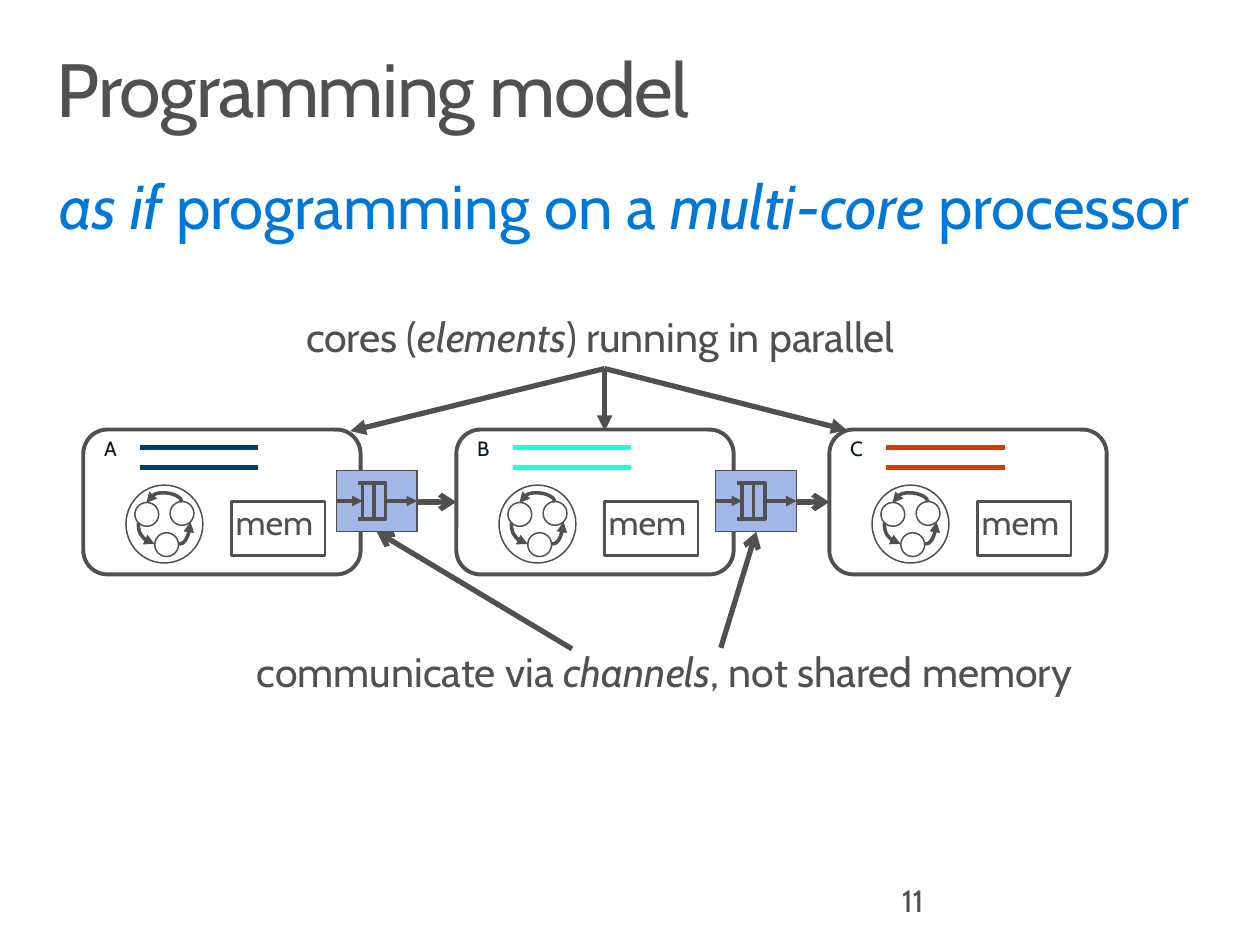
from lxml import etree
from pptx import Presentation
from pptx.dml.color import RGBColor
from pptx.enum.shapes import MSO_CONNECTOR as LINK, MSO_SHAPE as SHAPE
from pptx.oxml.ns import qn
from pptx.util import Cm, Pt

color = RGBColor.from_string
GRAY, BLUE, WHITE = "505050", "0078D7", "FFFFFF"


def add_box(shapes, kind, left, top, width, height, fill, weight):
    box = shapes.add_shape(kind, Cm(left), Cm(top), Cm(width), Cm(height))
    box.shadow.inherit = False
    if fill:
        box.fill.solid()
        box.fill.fore_color.rgb = color(fill)
    else:
        box.fill.background()
    box.line.color.rgb = color(GRAY)
    box.line.width = Pt(weight)
    return box


def add_line(shapes, start, end, weight, stroke=GRAY, head=None, tail=None, kind=LINK.STRAIGHT):
    line = shapes.add_connector(kind, *map(Cm, start + end))
    line.line.color.rgb = color(stroke)
    line.line.width = Pt(weight)
    outline = line.line._get_or_add_ln()
    for tag, arrow in (("a:headEnd", head), ("a:tailEnd", tail)):
        if arrow:
            etree.SubElement(outline, qn(tag)).set("type", arrow)
    etree.SubElement(line._element.spPr, qn("a:effectLst"))
    return line


prs = Presentation()
prs.slide_width, prs.slide_height = Cm(25.4), Cm(19.05)
slide = prs.slides.add_slide(prs.slide_layouts[6])
canvas = slide.shapes

texts = [
    (0.74, 0.81, 23.9, 2.49, 0.41, 0.25, 43.1, GRAY, 0.9, ["Programming model"]),
    (0.74, 3.3, 24.33, 1.88, 0.46, 0.25, 35.3, BLUE, 0.9,
     ["", "as if", " programming on a ", "multi-core", " processor"]),
    (5.66, 5.99, 14.12, 1.7, 0.51, 0.41, 23.5, GRAY, 0.9,
     ["cores (", "elements", ") running in parallel"]),
    (4.67, 12.73, 18.24, 1.7, 0.51, 0.41, 23.5, GRAY, 0.9,
     ["communicate via ", "channels", ", not shared memory"]),
    (17.93, 17.65, 5.72, 1.02, 0.25, 0.13, 17.6, GRAY, 1, ["11"]),
]

core_pitch = 7.52
cores = []
for index, (letter, thread_color) in enumerate([("A", "003C6C"), ("B", "1BFFE3"), ("C", "D83B01")]):
    x = 1.68 + index * core_pitch
    cores.append(add_box(canvas, SHAPE.ROUNDED_RECTANGLE, x, 8.66, 5.59, 2.92, WHITE, 2.25))
    texts.append((x + 0.17, 8.66, 4.04, 0.76, 0.25, 0.13, 11.8, "061922", 1, [letter]))

    machine = canvas.add_group_shape().shapes
    add_box(machine, SHAPE.OVAL, x + 0.86, 9.78, 1.55, 1.57, None, 0.85)
    for dx, top in [(1.44, 10.74), (1.04, 10.13), (1.75, 10.11)]:
        add_box(machine, SHAPE.OVAL, x + dx, top, 0.48, 0.48, WHITE, 0.85)
    to_right = add_line(machine, (x + 1.93, 10.97), (x + 2.16, 10.52), 2,
                        tail="triangle", kind=LINK.CURVE)
    to_bottom = add_line(machine, (x + 1.44, 10.97), (x + 1.11, 10.54), 2,
                         head="triangle", kind=LINK.CURVE)
    for quarter in (to_right, to_bottom):
        quarter._element.spPr.find(qn("a:prstGeom")).set("prst", "curvedConnector2")
    to_left = add_line(machine, (x + 1.64, 10.49), (x + 1.62, 9.77), 2,
                       tail="triangle", kind=LINK.CURVE)
    arch = to_left._element.spPr
    arch.find(qn("a:xfrm")).set("rot", str(270 * 60000))
    bend = arch.find(qn("a:prstGeom")).find(qn("a:avLst"))
    etree.SubElement(bend, qn("a:gd"), name="adj1", fmla="val -920000")

    for y in (9.02, 9.42):
        add_line(canvas, (x + 1.14, y), (x + 3.53, y), 3, thread_color)
    add_box(canvas, SHAPE.RECTANGLE, x + 2.99, 10.11, 1.88, 1.09, WHITE, 1.5)
    texts.append((x + 2.56, 9.83, 2.57, 1.55, 0.51, 0.41, 19.6, GRAY, 0.9, ["mem"]))

for sender, receiver in zip(cores, cores[1:]):
    flow = add_line(canvas, (0, 0), (1, 1), 3, tail="arrow")
    flow.begin_connect(sender, 3)
    flow.end_connect(receiver, 1)

y = 9.48
for x, pointer_start in [(6.78, (11.53, 13.08)), (14.43, (14.53, 13.06))]:
    queue = canvas.add_group_shape().shapes
    channel = add_box(queue, SHAPE.RECTANGLE, x, y, 1.63, 1.24, "A2B7E6", 0.75)
    slots = [add_box(queue, SHAPE.RECTANGLE, x + dx, y + 0.26, 0.23, 0.72, None, 2)
             for dx in (0.53, 0.76)]
    for source, source_side, target, target_side in [(channel, 1, slots[0], 1),
                                                     (slots[1], 3, channel, 3)]:
        step = add_line(queue, (x, y), (x + 1, y + 1), 2, tail="triangle")
        step.begin_connect(source, source_side)
        step.end_connect(target, target_side)
    for dy in (0.26, 0.98):
        add_line(queue, (x + 0.43, y + dy), (x + 0.66, y + dy), 2)
    pointer = add_line(canvas, pointer_start, (x + 0.81, y + 1.24), 3, tail="arrow")
    pointer.end_connect(channel, 2)

for core_point in [(7.06, 8.69), (12.19, 8.69), (17.07, 8.67)]:
    add_line(canvas, (12.19, 7.43), core_point, 3, tail="triangle")

for left, top, width, height, inset_x, inset_y, size, ink, spacing, parts in texts:
    frame = canvas.add_textbox(Cm(left), Cm(top), Cm(width), Cm(height)).text_frame
    frame.word_wrap = True
    frame.margin_left, frame.margin_right = Cm(inset_x), Cm(0)
    frame.margin_top = frame.margin_bottom = Cm(inset_y)
    paragraph = frame.paragraphs[0]
    paragraph.line_spacing = spacing
    for position, part in enumerate(parts):
        if not part:
            continue
        run = paragraph.add_run()
        run.text = part
        run.font.name = "Cabin"
        run.font.size = Pt(size)
        run.font.color.rgb = color(ink)
        run.font.italic = position % 2 == 1
        if size > 40:
            run._r.get_or_add_rPr().set("spc", "-80")

prs.save("out.pptx")
